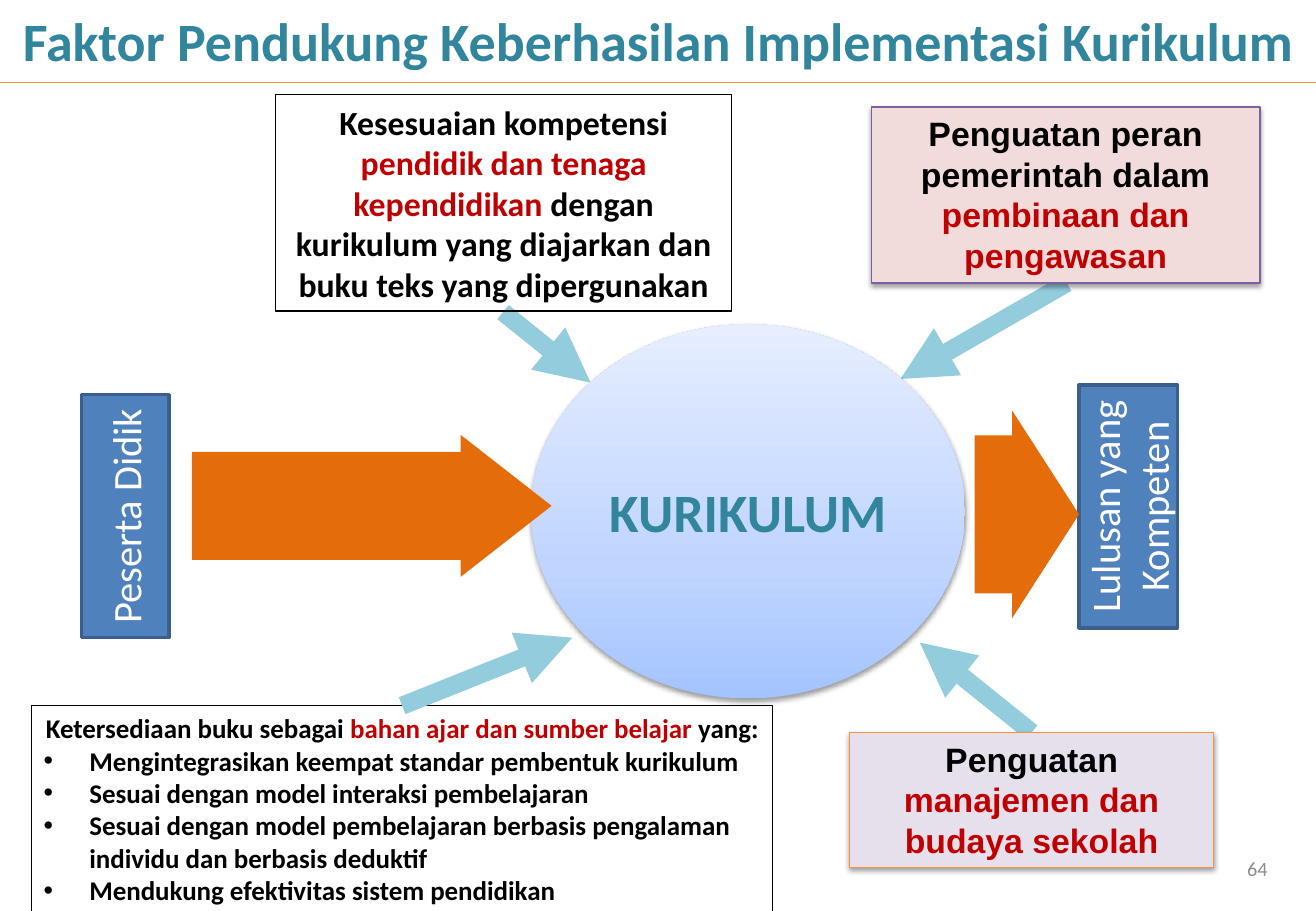
from copy import deepcopy
from dataclasses import dataclass
from typing import Any, Optional

from lxml.etree import SubElement
from pptx import Presentation
from pptx.dml.color import RGBColor
from pptx.enum.shapes import MSO_CONNECTOR, MSO_SHAPE
from pptx.enum.text import MSO_ANCHOR, MSO_AUTO_SIZE, PP_ALIGN
from pptx.oxml.ns import qn
from pptx.util import Pt

EMU_PER_PX = 9144
SLIDE_SIZE = (1083, 750)

BLACK = RGBColor(0x00, 0x00, 0x00)
WHITE = RGBColor(0xFF, 0xFF, 0xFF)
RED = RGBColor(0xC0, 0x00, 0x00)
GREY = RGBColor(0x8C, 0x8C, 0x8C)
TEAL = RGBColor(0x31, 0x85, 0x9C)
SKY = RGBColor(0x93, 0xCD, 0xDD)
BLUE = RGBColor(0x4F, 0x81, 0xBD)
DARK_BLUE = RGBColor(0x3A, 0x5F, 0x8C)
ORANGE = RGBColor(0xE4, 0x6C, 0x0A)
LIGHT_ORANGE = RGBColor(0xF6, 0x92, 0x40)
PINK = RGBColor(0xF2, 0xDC, 0xDB)
PURPLE = RGBColor(0x7D, 0x60, 0xA0)
LILAC = RGBColor(0xE6, 0xE0, 0xEC)
CIRCLE_STOPS = (
    (0, RGBColor(0xA4, 0xC4, 0xFF)),
    (0.35, RGBColor(0xBF, 0xD4, 0xFF)),
    (1, RGBColor(0xE6, 0xEE, 0xFF)),
)

Box = tuple[int, int, int, int]
Runs = tuple[tuple[str, RGBColor], ...]

HEADING = {"size": Pt(32), "name": "Calibri", "bold": True}
SIDE_LABEL = {"size": Pt(24), "name": "Calibri", "bold": False}
FACTOR = {"size": Pt(20), "name": "Calibri", "bold": True}
FACTOR_ARIAL = {**FACTOR, "name": "Arial"}
LIST = {"size": Pt(16), "name": "Calibri", "bold": True}
PAGE_NUMBER = {"size": Pt(12), "name": "Calibri", "bold": False}


@dataclass(frozen=True)
class Block:
    box: Box
    runs: Runs = ()
    font: Optional[dict[str, Any]] = None
    kind: MSO_SHAPE = MSO_SHAPE.RECTANGLE
    fill: Optional[RGBColor] = None
    line: Optional[RGBColor] = None
    line_width: float = 0.75
    anchor: MSO_ANCHOR = MSO_ANCHOR.MIDDLE
    shadow: bool = False
    vertical: bool = False
    gradient: bool = False


@dataclass(frozen=True)
class Line:
    start: tuple[int, int]
    end: tuple[int, int]
    color: RGBColor = SKY
    width: float = 10.75
    arrow: bool = True


LINES = (
    Line((414, 257), (486, 315)),
    Line((878, 233), (741, 312)),
    Line((331, 581), (471, 525)),
    Line((849, 603), (757, 529)),
    Line((0, 68), (1083, 68), LIGHT_ORANGE, 0.75, False),
)

BLOCKS = (
    Block((437, 267, 357, 308), (("KURIKULUM", TEAL),), HEADING,
          MSO_SHAPE.OVAL, shadow=True, gradient=True),
    Block((67, 325, 72, 200), (("Peserta Didik", WHITE),), SIDE_LABEL,
          fill=BLUE, line=DARK_BLUE, line_width=2, vertical=True),
    Block((888, 317, 81, 200), (("Lulusan yang Kompeten", WHITE),), SIDE_LABEL,
          fill=BLUE, line=DARK_BLUE, line_width=2, vertical=True),
    Block((802, 338, 86, 171), kind=MSO_SHAPE.RIGHT_ARROW, fill=ORANGE),
    Block((717, 88, 320, 145),
          (("Penguatan peran pemerintah dalam ", BLACK), ("pembinaan dan pengawasan", RED)),
          FACTOR_ARIAL, fill=PINK, line=PURPLE, anchor=MSO_ANCHOR.TOP, shadow=True),
    Block((699, 603, 300, 111),
          (("Penguatan ", BLACK), ("manajemen dan budaya sekolah", RED)),
          FACTOR_ARIAL, fill=LILAC, line=LIGHT_ORANGE, anchor=MSO_ANCHOR.TOP, shadow=True),
    Block((158, 358, 296, 117), kind=MSO_SHAPE.RIGHT_ARROW, fill=ORANGE),
    Block((227, 78, 375, 178),
          (("Kesesuaian kompetensi ", BLACK), ("pendidik dan tenaga kependidikan ", RED),
           ("dengan kurikulum yang diajarkan dan buku teks yang dipergunakan", BLACK)),
          FACTOR, line=BLACK),
)

BOOK_HEADING: Runs = (
    ("Ketersediaan buku sebagai ", BLACK),
    ("bahan ajar dan sumber belajar ", RED),
    ("yang:", BLACK),
)
BOOK_POINTS = (
    "Mengintegrasikan keempat standar pembentuk kurikulum",
    "Sesuai dengan model interaksi pembelajaran",
    "Sesuai dengan model pembelajaran berbasis pengalaman individu dan berbasis deduktif",
    "Mendukung efektivitas sistem pendidikan",
)


def px(value: int) -> int:
    return value * EMU_PER_PX


def set_values(target: Any, values: dict[str, Any]) -> None:
    for name, value in values.items():
        setattr(target, name, value)


def place(shape: Any, box: Box) -> None:
    set_values(shape, dict(zip(("left", "top", "width", "height"), map(px, box))))


def set_frame(shape: Any, anchor: MSO_ANCHOR) -> None:
    set_values(shape.text_frame, {
        "word_wrap": True, "auto_size": MSO_AUTO_SIZE.NONE, "vertical_anchor": anchor,
    })


def write_runs(paragraph: Any, runs: Runs, font: dict[str, Any], alignment: PP_ALIGN) -> None:
    set_values(paragraph, {"alignment": alignment, "space_before": Pt(0)})
    for text, color in runs:
        run = paragraph.add_run()
        run.text = text
        set_values(run.font, font)
        run.font.color.rgb = color


def add_shadow(shape: Any) -> None:
    effects = shape.element.spPr.find(qn("a:effectLst"))
    shadow = SubElement(effects, qn("a:outerShdw"), blurRad=str(Pt(3.1)), dist=str(Pt(1.6)),
                        dir="5400000", rotWithShape="0")
    color = SubElement(shadow, qn("a:srgbClr"), val=str(BLACK))
    SubElement(color, qn("a:alpha"), val="38000")


def fill_gradient(shape: Any) -> None:
    shape.fill.gradient()
    shape.fill.gradient_angle = 90
    stop_list = shape.element.spPr.find(".//" + qn("a:gsLst"))
    stop_list.append(deepcopy(stop_list[0]))
    for stop, (position, color) in zip(shape.fill.gradient_stops, CIRCLE_STOPS):
        stop.position = position
        stop.color.rgb = color


def set_outline(line: Any, color: RGBColor, width: float) -> None:
    line.color.rgb = color
    line.width = Pt(width)


def draw_block(slide: Any, block: Block) -> None:
    shape = slide.shapes.add_shape(block.kind, *map(px, block.box))
    shape.shadow.inherit = False
    if block.gradient:
        fill_gradient(shape)
    elif block.fill is not None:
        shape.fill.solid()
        shape.fill.fore_color.rgb = block.fill
    else:
        shape.fill.background()
    if block.line is not None:
        set_outline(shape.line, block.line, block.line_width)
    else:
        shape.line.fill.background()
    if block.shadow:
        add_shadow(shape)
    if block.kind == MSO_SHAPE.RIGHT_ARROW:
        shape.adjustments[0], shape.adjustments[1] = 0.76, 0.64
    if block.font is not None:
        set_frame(shape, block.anchor)
        write_runs(shape.text_frame.paragraphs[0], block.runs, block.font, PP_ALIGN.CENTER)
    if block.vertical:
        shape.element.txBody.find(qn("a:bodyPr")).set("vert", "vert270")


def draw_line(slide: Any, line: Line) -> None:
    connector = slide.shapes.add_connector(
        MSO_CONNECTOR.STRAIGHT, *map(px, line.start + line.end))
    set_outline(connector.line, line.color, line.width)
    properties = connector.element.spPr
    if line.arrow:
        SubElement(properties.find(qn("a:ln")), qn("a:tailEnd"), type="triangle")
    SubElement(properties, qn("a:effectLst"))


def fill_title(title: Any) -> None:
    place(title, (0, -11, 1084, 88))
    set_frame(title, MSO_ANCHOR.MIDDLE)
    runs = (("Faktor Pendukung Keberhasilan Implementasi Kurikulum", TEAL),)
    write_runs(title.text_frame.paragraphs[0], runs, HEADING, PP_ALIGN.CENTER)


def fill_book_list(body: Any) -> None:
    place(body, (26, 581, 610, 172))
    set_frame(body, MSO_ANCHOR.TOP)
    set_outline(body.line, BLACK, 0.75)
    heading = body.text_frame.paragraphs[0]
    write_runs(heading, BOOK_HEADING, LIST, PP_ALIGN.CENTER)
    properties = heading._p.get_or_add_pPr()
    properties.set("marL", "0")
    properties.set("indent", "0")
    SubElement(properties, qn("a:buNone"))
    for point in BOOK_POINTS:
        write_runs(body.text_frame.add_paragraph(), ((point, BLACK),), LIST, PP_ALIGN.LEFT)


def add_page_number(slide: Any) -> None:
    text_box = slide.shapes.add_textbox(*map(px, (800, 695, 253, 40)))
    set_frame(text_box, MSO_ANCHOR.MIDDLE)
    write_runs(text_box.text_frame.paragraphs[0], (("64", GREY),), PAGE_NUMBER, PP_ALIGN.RIGHT)


def main() -> None:
    presentation = Presentation()
    presentation.slide_width, presentation.slide_height = map(px, SLIDE_SIZE)
    slide = presentation.slides.add_slide(presentation.slide_layouts[1])
    fill_title(slide.shapes.title)
    fill_book_list(slide.placeholders[1])
    for line in LINES:
        draw_line(slide, line)
    for block in BLOCKS:
        draw_block(slide, block)
    add_page_number(slide)
    presentation.save("out.pptx")


if __name__ == "__main__":
    main()
